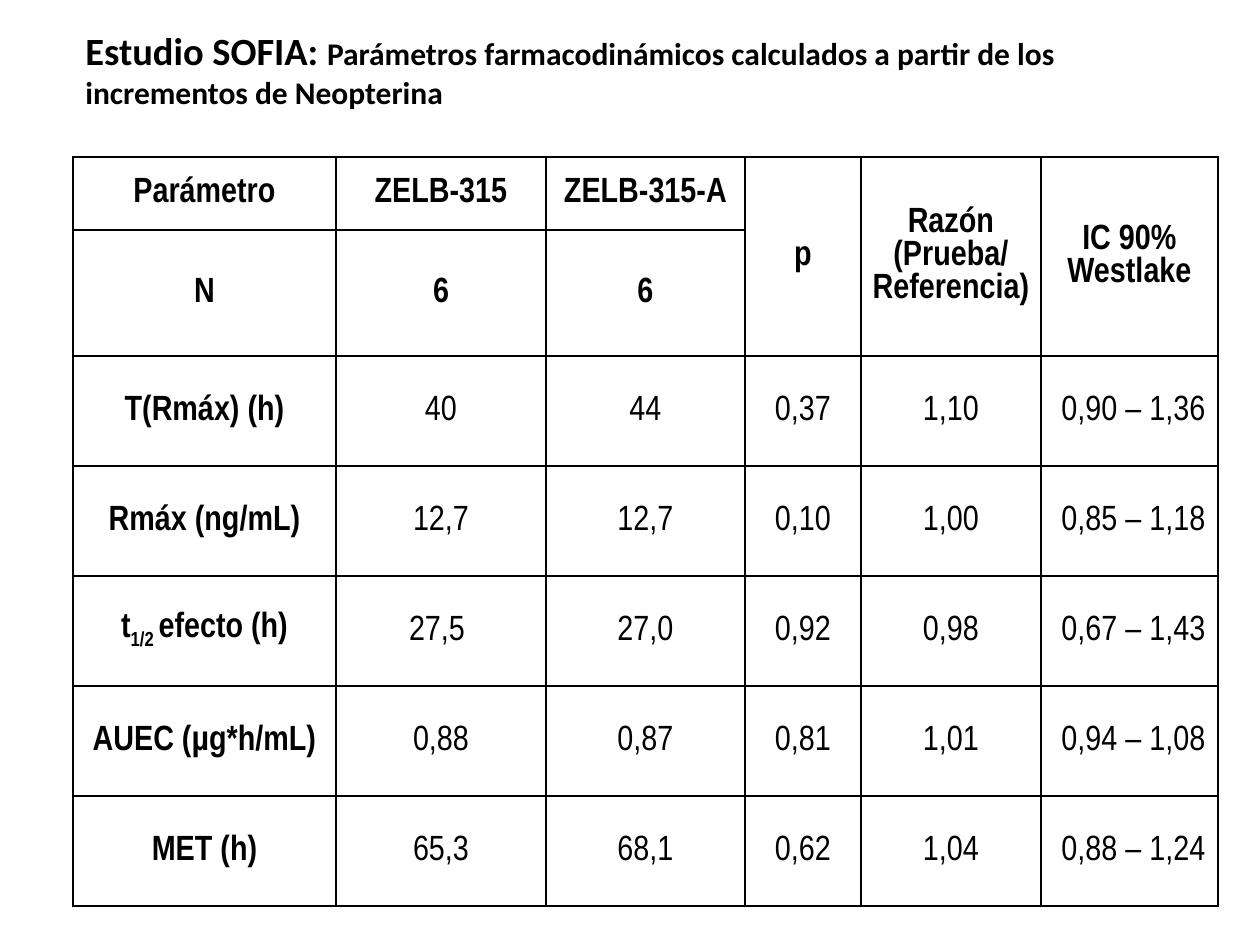
from lxml.etree import SubElement
from pptx import Presentation
from pptx.dml.color import RGBColor
from pptx.enum.text import MSO_ANCHOR as Anchor, MSO_AUTO_SIZE as AutoSize, PP_ALIGN as Align
from pptx.oxml.ns import qn
from pptx.util import Emu, Pt

BLACK = RGBColor(0, 0, 0)
PX = 914400 // 126

TITLE = [
    ("Estudio SOFIA: ", 22),
    ("Parámetros farmacodinámicos calculados a partir de los incrementos de Neopterina", 18),
]
HEADER_ROWS = 2
ROWS = [
    ["Parámetro", "ZELB-315", "ZELB-315-A", "p", "Razón\n(Prueba/\nReferencia)", "IC 90%\nWestlake"],
    ["N", "6", "6", None, None, None],
    ["T(Rmáx) (h)", "40", "44", "0,37", "1,10", " 0,90 – 1,36"],
    ["Rmáx (ng/mL)", "12,7", "12,7", "0,10", "1,00", " 0,85 – 1,18"],
    [("t", "1/2 ", "efecto (h)"), "27,5 ", "27,0", "0,92", "0,98", " 0,67 – 1,43"],
    ["AUEC (µg*h/mL)", "0,88", "0,87", "0,81", "1,01", " 0,94 – 1,08"],
    ["MET (h)", "65,3", "68,1", "0,62", "1,04", " 0,88 – 1,24"],
]
COLUMN_WIDTHS = [263, 210, 199, 116, 180, 177]
ROW_HEIGHTS = [73, 126] + [110] * 5
CELL_FORMAT = {
    "margin_left": 0, "margin_right": 0, "margin_top": 0, "margin_bottom": 0,
    "vertical_anchor": Anchor.MIDDLE,
}


def px(*lengths):
    return [Emu(length * PX) for length in lengths]


def style(run, font_name, size, bold):
    for name, value in {"name": font_name, "size": Pt(size), "bold": bold}.items():
        setattr(run.font, name, value)
    run.font.color.rgb = BLACK


def add_borders(cell):
    properties = cell._tc.get_or_add_tcPr()
    for side in ("a:lnL", "a:lnR", "a:lnT", "a:lnB"):
        line = SubElement(properties, qn(side), w=str(Pt(1)))
        SubElement(SubElement(line, qn("a:solidFill")), qn("a:srgbClr"), val=str(BLACK))


def write_cell(cell, content, bold):
    paragraph = cell.text_frame.paragraphs[0]
    paragraph.alignment = Align.CENTER
    if isinstance(content, tuple):
        for part in content:
            paragraph.add_run().text = part
        # The middle part is the subscript
        paragraph.runs[1]._r.get_or_add_rPr().set("baseline", "-25000")
    else:
        paragraph.text = content
    for run in paragraph.runs:
        style(run, "Arial Narrow", 20, bold)


prs = Presentation()
prs.slide_width, prs.slide_height = px(1260, 945)
slide = prs.slides.add_slide(prs.slide_layouts[6])

# Title
title = slide.shapes.add_textbox(*px(73, 21, 1142, 97)).text_frame
title.word_wrap = True
title.auto_size = AutoSize.SHAPE_TO_FIT_TEXT
heading = title.paragraphs[0]
heading.space_after = Pt(6)
for words, size in TITLE:
    run = heading.add_run()
    run.text = words
    style(run, "Calibri", size, True)

# Table of parameters
frame = px(73, 157, sum(COLUMN_WIDTHS), sum(ROW_HEIGHTS))
table = slide.shapes.add_table(len(ROWS), len(COLUMN_WIDTHS), *frame).table
table.first_row = table.horz_banding = False
for column, width in zip(table.columns, px(*COLUMN_WIDTHS)):
    column.width = width
for row, height in zip(table.rows, px(*ROW_HEIGHTS)):
    row.height = height

for r, contents in enumerate(ROWS):
    for c, content in enumerate(contents):
        cell = table.cell(r, c)
        for name, value in CELL_FORMAT.items():
            setattr(cell, name, value)
        add_borders(cell)
        cell.fill.background()
        if content is None:
            table.cell(r - 1, c).merge(cell)
        else:
            write_cell(cell, content, r < HEADER_ROWS or c == 0)

prs.save("out.pptx")
